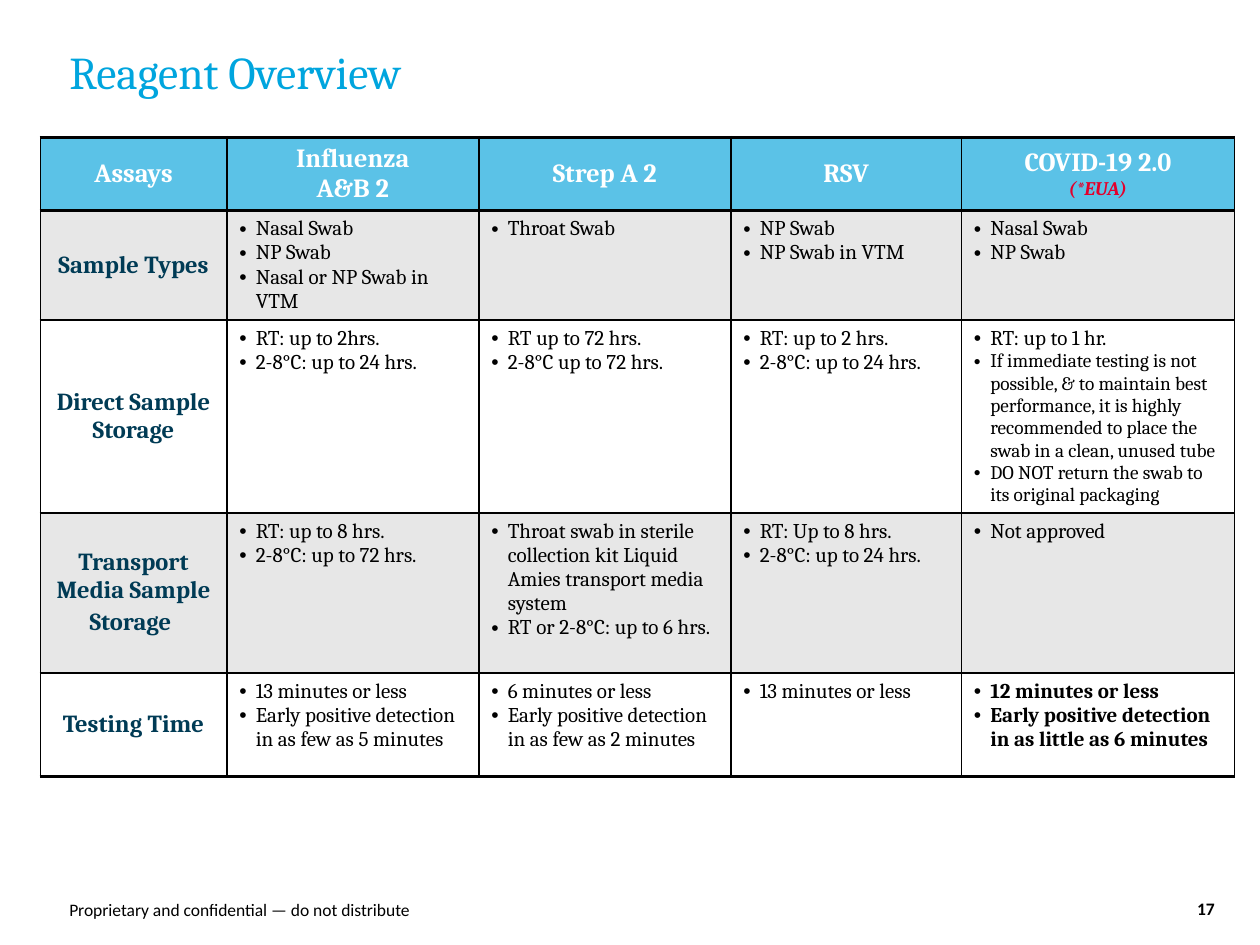
from lxml import etree
from pptx import Presentation
from pptx import util as u
from pptx.dml.color import RGBColor
from pptx.enum import text
from pptx.oxml import ns

COLORS = {
    "title": "00A5DE", "header": "5BC2E7", "band": "E7E7E7", "white": "FFFFFF",
    "label": "003B55", "note": "E3002B", "black": "000000",
}


def add_span(para, words, size, color, font="Cambria", **flags):
    span = para.add_run()
    span.text = words
    values = {"name": font, "size": u.Pt(size), "bold": False, **flags}
    for name, value in values.items():
        setattr(span.font, name, value)
    span.font.color.rgb = RGBColor.from_string(COLORS[color])


def set_border(cell, edge, points):
    properties = cell._tc.get_or_add_tcPr()
    line = etree.SubElement(properties, ns.qn(f"a:ln{edge}"), w=str(u.Pt(points)))
    fill = etree.SubElement(line, ns.qn("a:solidFill"))
    etree.SubElement(fill, ns.qn("a:srgbClr"), val=COLORS["black"])


deck = Presentation()
deck.slide_width, deck.slide_height = u.Inches(10), u.Inches(7.5)
unit = deck.slide_width / 10
page = deck.slides.add_slide(deck.slide_layouts[5])

title = page.shapes.title
place = {"left": 0.55, "top": 0.4, "width": 9, "height": 0.52}
for name, value in place.items():
    setattr(title, name, int(value * unit))
frame = title.text_frame
layout = {
    "margin_left": 0, "margin_top": 0, "margin_right": u.Inches(0.1),
    "margin_bottom": u.Inches(0.05), "word_wrap": True,
    "auto_size": text.MSO_AUTO_SIZE.NONE, "vertical_anchor": text.MSO_ANCHOR.TOP,
}
for name, value in layout.items():
    setattr(frame, name, value)
para = frame.paragraphs[0]
para.alignment = text.PP_ALIGN.LEFT
para.line_spacing = 0.9
add_span(para, "Reagent Overview", 26, "title")

headers = [["Assays"], ["Influenza", "A&B 2"], ["Strep A 2"], ["RSV"], ["COVID-19 2.0", "(*EUA)"]]
assays = [
    ("Sample Types", [
        ["Nasal Swab", "NP Swab", "Nasal or NP Swab in VTM"],
        ["Throat Swab"],
        ["NP Swab", "NP Swab in VTM"],
        ["Nasal Swab", "NP Swab"],
    ]),
    ("Direct Sample Storage", [
        ["RT: up to 2hrs.", "2-8°C: up to 24 hrs."],
        ["RT up to 72 hrs.", "2-8°C up to 72 hrs."],
        ["RT: up to 2 hrs.", "2-8°C: up to 24 hrs."],
        ["RT: up to 1 hr.",
         "If immediate testing is not possible, & to maintain best performance, "
         "it is highly recommended to place the swab in a clean, unused tube",
         "DO NOT return the swab to its original packaging"],
    ]),
    ("Transport Media Sample Storage", [
        ["RT: up to 8 hrs.", "2-8°C: up to 72 hrs."],
        ["Throat swab in sterile collection kit Liquid Amies transport media system",
         "RT or 2-8°C: up to 6 hrs."],
        ["RT: Up to 8 hrs.", "2-8°C: up to 24 hrs."],
        ["Not approved"],
    ]),
    ("Testing Time", [
        ["13 minutes or less", "Early positive detection in as few as 5 minutes"],
        ["6 minutes or less", "Early positive detection in as few as 2 minutes"],
        ["13 minutes or less"],
        ["12 minutes or less", "Early positive detection in as little as 6 minutes"],
    ]),
]
grid = [headers] + [[[label], *details] for label, details in assays]
widths = [1.48, 2, 2, 1.83, 2.17]
heights = [0.49, 0.87, 1.3, 1.27, 0.82]
last = len(grid) - 1

table = page.shapes.add_table(
    len(heights), len(widths), int(0.32 * unit), int(1.09 * unit),
    int(sum(widths) * unit), int(sum(heights) * unit),
).table
table.first_row = table.horz_banding = False
for column, width in zip(table.columns, widths):
    column.width = int(width * unit)
for row, height in zip(table.rows, heights):
    row.height = int(height * unit)

for r, entries in enumerate(grid):
    for c, lines in enumerate(entries):
        cell = table.cell(r, c)
        edges = {"L": 1, "R": 1, "T": 2 if r < 2 else 1, "B": 2 if r in (0, last) else 1}
        for edge, points in edges.items():
            set_border(cell, edge, points)
        cell.fill.solid()
        shade = "header" if r == 0 else "band" if r % 2 else "white"
        cell.fill.fore_color.rgb = RGBColor.from_string(COLORS[shade])
        centred = r == 0 or c == 0
        cell.vertical_anchor = text.MSO_ANCHOR.MIDDLE if centred else text.MSO_ANCHOR.TOP
        for i, words in enumerate(lines):
            para = cell.text_frame.paragraphs[0] if i == 0 else cell.text_frame.add_paragraph()
            if centred:
                para.alignment = text.PP_ALIGN.CENTER
            else:
                indent = u.Inches(0.13)
                bullet = para._p.get_or_add_pPr()
                bullet.set("marL", str(indent))
                bullet.set("indent", str(-indent))
                etree.SubElement(bullet, ns.qn("a:buFont"), typeface="Arial")
                etree.SubElement(bullet, ns.qn("a:buChar"), char="•")
            if words == "(*EUA)":
                add_span(para, words, 11, "note", bold=True, italic=True)
            elif r == 0:
                add_span(para, words, 15, "white", bold=True)
            elif c == 0:
                add_span(para, words, 14, "label", bold=True)
                if r == 3:
                    add_span(para, " ", 16, "label", bold=True)
            else:
                size = 11 if (r, c) == (2, 4) and i else 12
                add_span(para, words, size, "black", bold=(r, c) == (last, 4))

footers = [
    ("Proprietary and confidential — do not distribute", 0.55, 3.34, 0.32, text.PP_ALIGN.LEFT, False),
    ("17", 9.41, 0.32, 0.31, text.PP_ALIGN.CENTER, True),
]
for words, left, width, height, alignment, bold in footers:
    box = page.shapes.add_textbox(*(int(n * unit) for n in (left, 7.03, width, height)))
    layout = {
        "margin_left": 0, "margin_right": 0, "word_wrap": True,
        "vertical_anchor": text.MSO_ANCHOR.BOTTOM,
    }
    for name, value in layout.items():
        setattr(box.text_frame, name, value)
    para = box.text_frame.paragraphs[0]
    para.alignment = alignment
    add_span(para, words, 10, "black", "Calibri", bold=bold)

deck.save("out.pptx")
